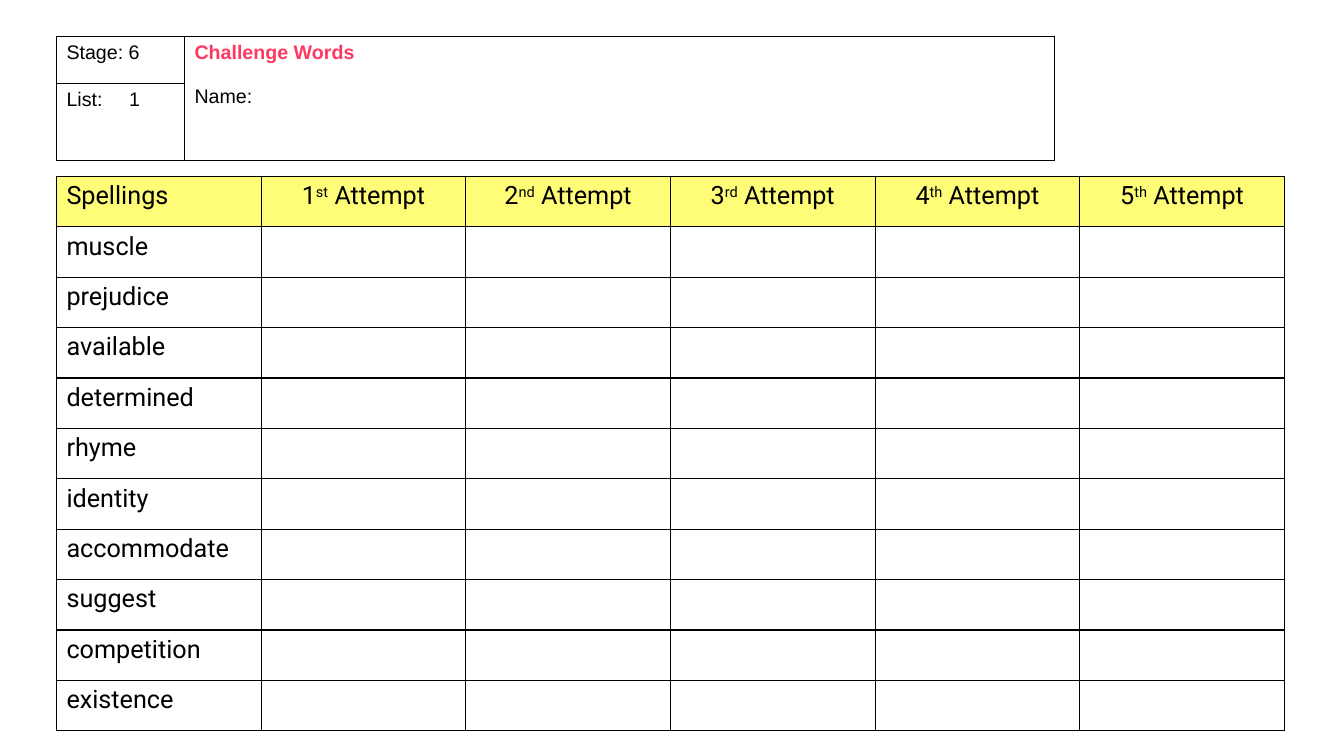
from lxml import etree
from pptx import Presentation
from pptx.dml.color import RGBColor
from pptx.enum.text import PP_ALIGN
from pptx.oxml.ns import qn
from pptx.util import Inches, Pt

CENTER = PP_ALIGN.CENTER
BLACK, YELLOW, PINK = "000000", "FFFD78", "FF3860"


def add_run(paragraph, text, font, size, color=BLACK, bold=False):
    run = paragraph.add_run()
    run.text = text
    run.font.name = font
    run.font.size = Pt(size)
    run.font.bold = bold
    run.font.color.rgb = RGBColor.from_string(color)
    return run


def add_grid(slide, left, top, widths, heights):
    """Add a plain table with thin black borders and no fills."""
    table = slide.shapes.add_table(
        len(heights), len(widths), Inches(left), Inches(top),
        Inches(sum(widths)), Inches(sum(heights))).table
    table.first_row = table.horz_banding = False
    for column, width in zip(table.columns, widths):
        column.width = Inches(width)
    for row, height in zip(table.rows, heights):
        row.height = Inches(height)
    for cell in table.iter_cells():
        properties = cell._tc.get_or_add_tcPr()
        for side in ("a:lnL", "a:lnR", "a:lnT", "a:lnB"):
            line = etree.SubElement(properties, qn(side), w=str(Pt(1)))
            solid = etree.SubElement(line, qn("a:solidFill"))
            etree.SubElement(solid, qn("a:srgbClr"), val=BLACK)
        cell.fill.background()
    return table


prs = Presentation()
prs.slide_width, prs.slide_height = Inches(13.33), Inches(7.5)
slide = prs.slides.add_slide(prs.slide_layouts[6])

# Spelling practice grid
words = ["muscle", "prejudice", "available", "determined", "rhyme", "identity",
         "accommodate", "suggest", "competition", "existence"]
ordinals = ["st", "nd", "rd", "th", "th"]
spellings = add_grid(slide, 0.56, 1.75, [2.03] * (len(ordinals) + 1),
                     [0.5] * (len(words) + 1))

for row, word in enumerate(["Spellings"] + words):
    add_run(spellings.cell(row, 0).text_frame.paragraphs[0], word, "Roboto", 18)

for number, ordinal in enumerate(ordinals, start=1):
    heading = spellings.cell(0, number).text_frame.paragraphs[0]
    heading.alignment = CENTER
    add_run(heading, str(number), "Roboto", 18)
    suffix = add_run(heading, ordinal, "Roboto", 18)
    suffix._r.get_or_add_rPr().set("baseline", "30000")
    add_run(heading, " Attempt", "Roboto", 18)

for column in range(len(ordinals) + 1):
    heading_fill = spellings.cell(0, column).fill
    heading_fill.solid()
    heading_fill.fore_color.rgb = RGBColor.from_string(YELLOW)

# Stage, list and name panel
details = add_grid(slide, 0.56, 0.36, [1.27, 8.63], [0.47, 0.76])
details.cell(0, 1).merge(details.cell(1, 1))
add_run(details.cell(0, 0).text_frame.paragraphs[0], "Stage: 6", "Arial", 14)

list_number = details.cell(1, 0).text_frame.paragraphs[0]
tabs = etree.SubElement(list_number._p.get_or_add_pPr(), qn("a:tabLst"))
etree.SubElement(tabs, qn("a:tab"), pos=str(Inches(0.62)), algn="l")
add_run(list_number, "List:\t1", "Arial", 14)

challenge = details.cell(0, 1).text_frame
add_run(challenge.paragraphs[0], "Challenge Words", "Arial", 14, PINK, True)
name = challenge.add_paragraph()
name.space_before = Pt(16)
add_run(name, "Name:", "Arial", 14)

prs.save("out.pptx")
